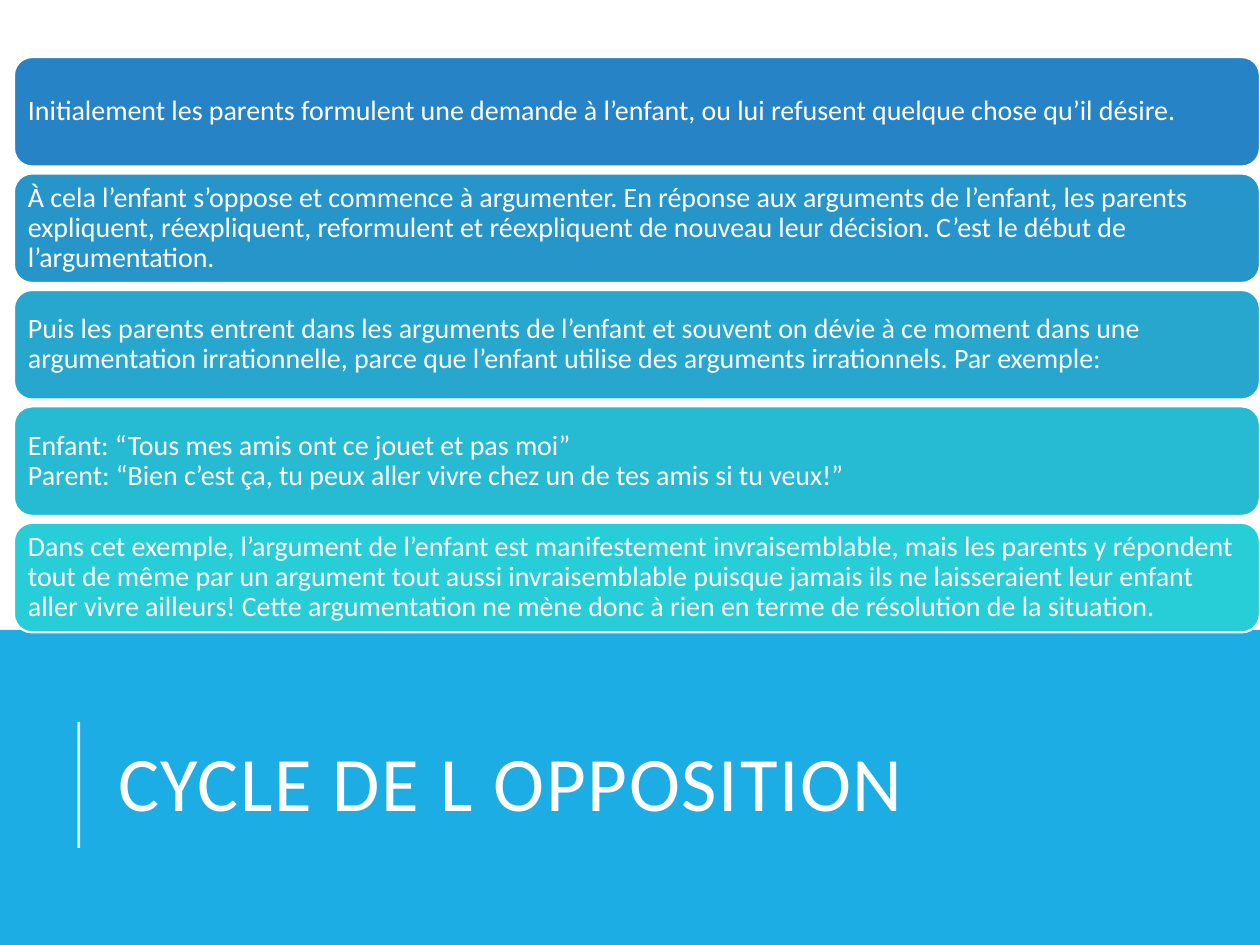
from lxml import etree
from pptx import Presentation
from pptx import util as u
from pptx.dml.color import RGBColor
from pptx.enum import shapes, text
from pptx.oxml import ns

WHITE = RGBColor(0xFF, 0xFF, 0xFF)
BAND_BLUE = RGBColor(0x1C, 0xAD, 0xE4)

STEPS = [
    (RGBColor(0x26, 0x83, 0xC6),
     "Initialement les parents formulent une demande à l’enfant, ou lui refusent "
     "quelque chose qu’il désire."),
    (RGBColor(0x26, 0x95, 0xCA),
     "À cela l’enfant s’oppose et commence à argumenter. En réponse aux arguments "
     "de l’enfant, les parents expliquent, réexpliquent, reformulent et "
     "réexpliquent de nouveau leur décision. C’est le début de l’argumentation."),
    (RGBColor(0x27, 0xA7, 0xCE),
     "Puis les parents entrent dans les arguments de l’enfant et souvent on dévie "
     "à ce moment dans une argumentation irrationnelle, parce que l’enfant utilise "
     "des arguments irrationnels. Par exemple:"),
    (RGBColor(0x27, 0xBA, 0xD3),
     "Enfant: “Tous mes amis ont ce jouet et pas moi”\v"
     "Parent: “Bien c’est ça, tu peux aller vivre chez un de tes amis si tu veux!”"),
    (RGBColor(0x27, 0xCE, 0xD7),
     "Dans cet exemple, l’argument de l’enfant est manifestement invraisemblable, "
     "mais les parents y répondent tout de même par un argument tout aussi "
     "invraisemblable puisque jamais ils ne laisseraient leur enfant aller vivre "
     "ailleurs! Cette argumentation ne mène donc à rien en terme de résolution de "
     "la situation."),
]


def write(frame, words, size, line_spacing, inset=None, tracking=None):
    frame.word_wrap = True
    frame.vertical_anchor = text.MSO_ANCHOR.MIDDLE
    if inset is not None:
        frame.margin_left = frame.margin_right = u.Pt(inset)
        frame.margin_top = frame.margin_bottom = u.Pt(inset)
    para = frame.paragraphs[0]
    para.text = words
    para.alignment = text.PP_ALIGN.LEFT
    para.line_spacing = line_spacing
    for span in para.runs:
        span.font.name = "Calibri"
        span.font.size = u.Pt(size)
        span.font.color.rgb = WHITE
        if tracking:
            span.font._element.set("spc", str(tracking * 100))


class SlideBuilder:
    def __init__(self, page):
        self.page = page

    def panel(self, kind, left, top, width, height, fill, outline=None):
        box = self.page.shapes.add_shape(
            kind, u.Pt(left), u.Pt(top), u.Pt(width), u.Pt(height))
        box.shadow.inherit = False
        box.fill.solid()
        box.fill.fore_color.rgb = fill
        if outline:
            box.line.color.rgb = WHITE
            box.line.width = u.Pt(outline)
        else:
            box.line.fill.background()
        return box

    def step(self, top, fill, words):
        box = self.panel(shapes.MSO_SHAPE.ROUNDED_RECTANGLE,
                         8, top, 712, 62.6, fill, outline=1.25)
        write(box.text_frame, words, size=16, line_spacing=0.9, inset=5)

    def title(self, left, top, width, height, words):
        box = self.page.shapes.add_textbox(
            u.Pt(left), u.Pt(top), u.Pt(width), u.Pt(height))
        write(box.text_frame, words, size=44, line_spacing=0.8, tracking=1)

    def rule(self, x, top, bottom, opacity):
        line = self.page.shapes.add_connector(
            shapes.MSO_CONNECTOR.STRAIGHT, u.Pt(x), u.Pt(bottom), u.Pt(x), u.Pt(top))
        line.line.color.rgb = WHITE
        line.line.width = u.Pt(1.5)
        properties = line._element.spPr
        color = properties.find(".//" + ns.qn("a:srgbClr"))
        etree.SubElement(color, ns.qn("a:alpha"), val=str(opacity * 1000))
        etree.SubElement(properties, ns.qn("a:effectLst"))


def main():
    deck = Presentation()
    deck.slide_width, deck.slide_height = u.Pt(720), u.Pt(540)
    builder = SlideBuilder(deck.slides.add_slide(deck.slide_layouts[6]))

    builder.panel(shapes.MSO_SHAPE.RECTANGLE, 0, 360, 720, 180, BAND_BLUE)
    builder.title(60.5, 392, 574, 118, "CYCLE DE L OPPOSITION")
    builder.rule(45, 412.5, 484.5, opacity=80)
    for index, (fill, words) in enumerate(STEPS):
        builder.step(32.6 + index * 66.55, fill, words)

    deck.save("out.pptx")


if __name__ == "__main__":
    main()
